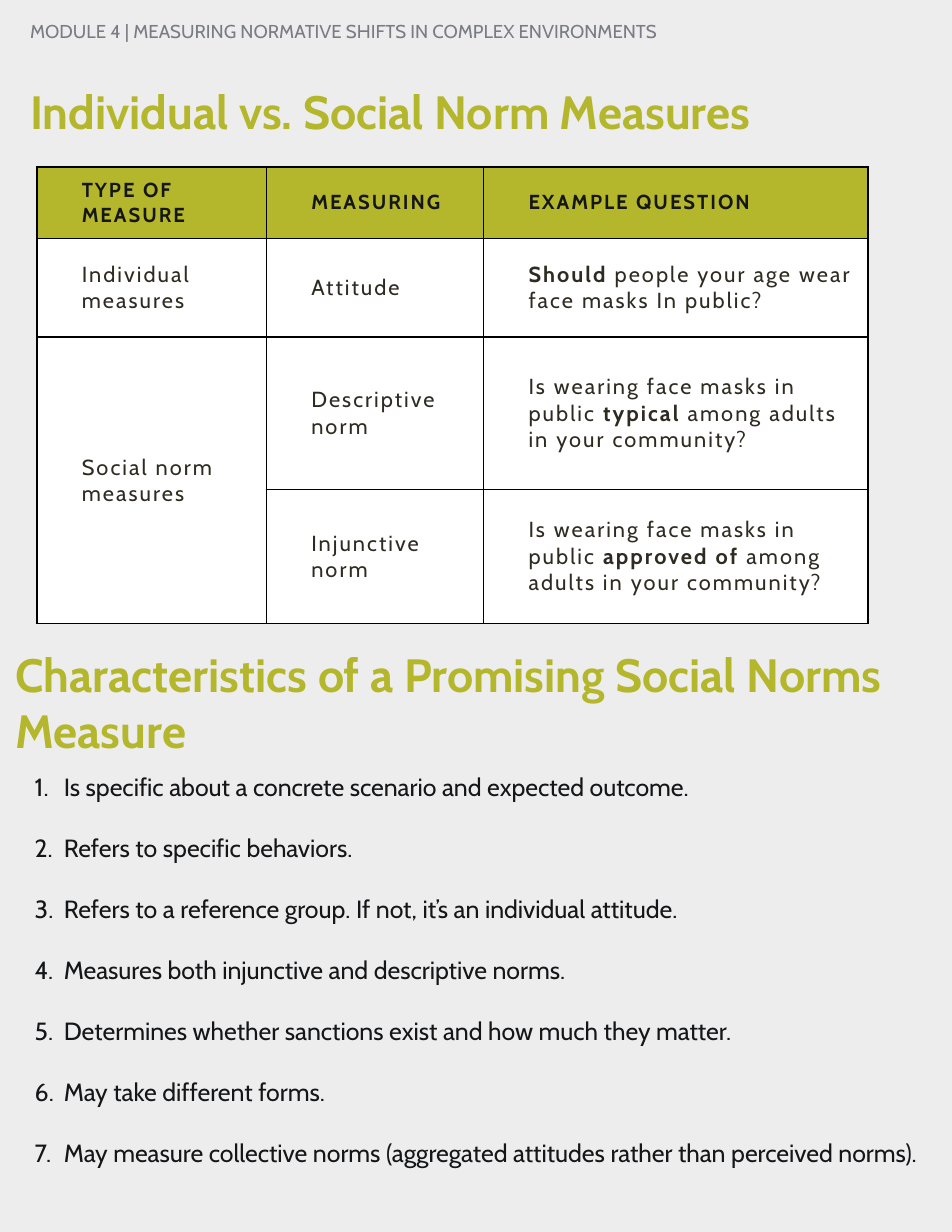
"""Builds the page on individual and social norm measures."""
from dataclasses import dataclass

from lxml import etree
from pptx import Presentation
from pptx.dml.color import RGBColor
from pptx.enum import text
from pptx.oxml import ns
from pptx.util import Inches, Pt

PAPER = RGBColor(0xED, 0xED, 0xEE)
GREEN = RGBColor(0xB4, 0xB6, 0x2B)
GREY = RGBColor(0x7A, 0x7C, 0x83)
INK = RGBColor(0x15, 0x16, 0x18)
BROWN = RGBColor(0x2E, 0x2C, 0x22)
WHITE = RGBColor(0xFF, 0xFF, 0xFF)
FONT = "Cabin"
TRACKING = 130


@dataclass(frozen=True)
class Box:
    left: float
    top: float
    width: float
    height: float

    def lengths(self) -> tuple:
        return tuple(Inches(v) for v in (self.left, self.top, self.width, self.height))


@dataclass(frozen=True)
class Row:
    height: float
    cells: tuple[str, str, str]


COLUMNS = (2.05, 1.94, 3.43)
ROWS = (
    Row(0.64, ("*TYPE OF MEASURE*", "*MEASURING*", "*EXAMPLE QUESTION*")),
    Row(0.88, ("Individual measures", "Attitude",
               "*Should* people your age wear face masks In public?")),
    Row(1.36, ("Social norm measures", "Descriptive norm",
               "Is wearing face masks in public *typical* among adults in your community?")),
    Row(1.2, ("", "Injunctive norm",
              "Is wearing face masks in public *approved of* among adults in your community?")),
)
CHARACTERISTICS = (
    "Is specific about a concrete scenario and expected outcome.",
    "Refers to specific behaviors.",
    "Refers to a reference group. If not, it’s an individual attitude.",
    "Measures both injunctive and descriptive norms.",
    "Determines whether sanctions exist and how much they matter.",
    "May take different forms.",
    "May measure collective norms (aggregated attitudes rather than perceived norms).",
)


def write(p, words: str, *, size: float, color: RGBColor, bold: bool = False,
          tracking: int = 0, before: float = 0, spacing: float = 1.0) -> None:
    """Fill a paragraph, setting words between asterisks in bold."""
    p.alignment = text.PP_ALIGN.LEFT
    p.space_before = Pt(before)
    p.line_spacing = spacing
    for i, part in enumerate(words.split("*")):
        if not part:
            continue
        r = p.add_run()
        r.text = part
        r.font.name, r.font.size = FONT, Pt(size)
        r.font.bold = bold or i % 2 == 1
        r.font.color.rgb = color
        if tracking:
            r.font._element.set("spc", str(tracking))


def prepare(sp, box: Box, anchor=text.MSO_ANCHOR.TOP):
    """Place a text shape and return its text frame."""
    sp.left, sp.top, sp.width, sp.height = box.lengths()
    tf = sp.text_frame
    tf.word_wrap = True
    tf.auto_size = text.MSO_AUTO_SIZE.NONE
    tf.vertical_anchor = anchor
    return tf


def add_label(s, box: Box, words: str, **style) -> None:
    """Add a text box holding one paragraph."""
    tf = prepare(s.shapes.add_textbox(*box.lengths()), box)
    write(tf.paragraphs[0], words, **style)


def number(p, indent: float) -> None:
    """Give a paragraph an automatic number with a hanging indent."""
    pPr = p._p.get_or_add_pPr()
    pPr.set("marL", str(Inches(indent)))
    pPr.set("indent", str(-Inches(indent)))
    font = etree.SubElement(pPr, ns.qn("a:buFont"))
    font.set("typeface", FONT)
    etree.SubElement(pPr, ns.qn("a:buAutoNum")).set("type", "arabicPeriod")


def outline(cell) -> None:
    """Draw black one-point borders on a cell."""
    tcPr = cell._tc.get_or_add_tcPr()
    for i, side in enumerate(("lnL", "lnR", "lnT", "lnB")):
        ln = etree.Element(ns.qn(f"a:{side}"), w=str(Pt(1)))
        fill = etree.SubElement(ln, ns.qn("a:solidFill"))
        etree.SubElement(fill, ns.qn("a:srgbClr")).set("val", "000000")
        tcPr.insert(i, ln)


def add_measures(s, box: Box) -> None:
    """Add the table that compares the measures."""
    table = s.shapes.add_table(len(ROWS), len(COLUMNS), *box.lengths()).table
    table.horz_banding = False
    for column, width in zip(table.columns, COLUMNS):
        column.width = Inches(width)
    for i, row in enumerate(ROWS):
        table.rows[i].height = Inches(row.height)
        header = i == 0
        for j, words in enumerate(row.cells):
            cell = table.cell(i, j)
            cell.fill.solid()
            cell.fill.fore_color.rgb = GREEN if header else WHITE
            cell.margin_left = Inches(0.4)
            cell.vertical_anchor = text.MSO_ANCHOR.MIDDLE
            write(cell.text_frame.paragraphs[0], words, size=13 if header else 14,
                  color=INK if header else BROWN, tracking=TRACKING)
            outline(cell)
    table.cell(2, 0).merge(table.cell(3, 0))


def add_list(sp, box: Box) -> None:
    """Write the numbered characteristics."""
    tf = prepare(sp, box)
    for i, words in enumerate(CHARACTERISTICS):
        p = tf.add_paragraph() if i else tf.paragraphs[0]
        number(p, 0.26)
        write(p, words, size=16, color=INK, before=20 if i else 0)


def main() -> None:
    prs = Presentation()
    prs.slide_width, prs.slide_height = Inches(8.5), Inches(11)
    s = prs.slides.add_slide(prs.slide_layouts[1])
    s.background.fill.solid()
    s.background.fill.fore_color.rgb = PAPER

    add_label(s, Box(0.17, 0.13, 6.58, 0.47),
              "MODULE 4 | MEASURING NORMATIVE SHIFTS IN COMPLEX ENVIRONMENTS",
              size=12, color=GREY)
    tf = prepare(s.shapes.title, Box(0.17, 0.73, 7.42, 0.58), text.MSO_ANCHOR.MIDDLE)
    write(tf.paragraphs[0], "Individual vs. Social Norm Measures",
          size=30, color=GREEN, bold=True, spacing=0.9)
    add_measures(s, Box(0.33, 1.49, sum(COLUMNS), sum(row.height for row in ROWS)))
    add_label(s, Box(0.04, 5.72, 8.08, 1.11),
              "Characteristics of a Promising Social Norms Measure",
              size=30, color=GREEN, bold=True)
    add_list(s.placeholders[1], Box(0.21, 6.84, 8.2, 3.67))
    prs.save("out.pptx")


if __name__ == "__main__":
    main()
